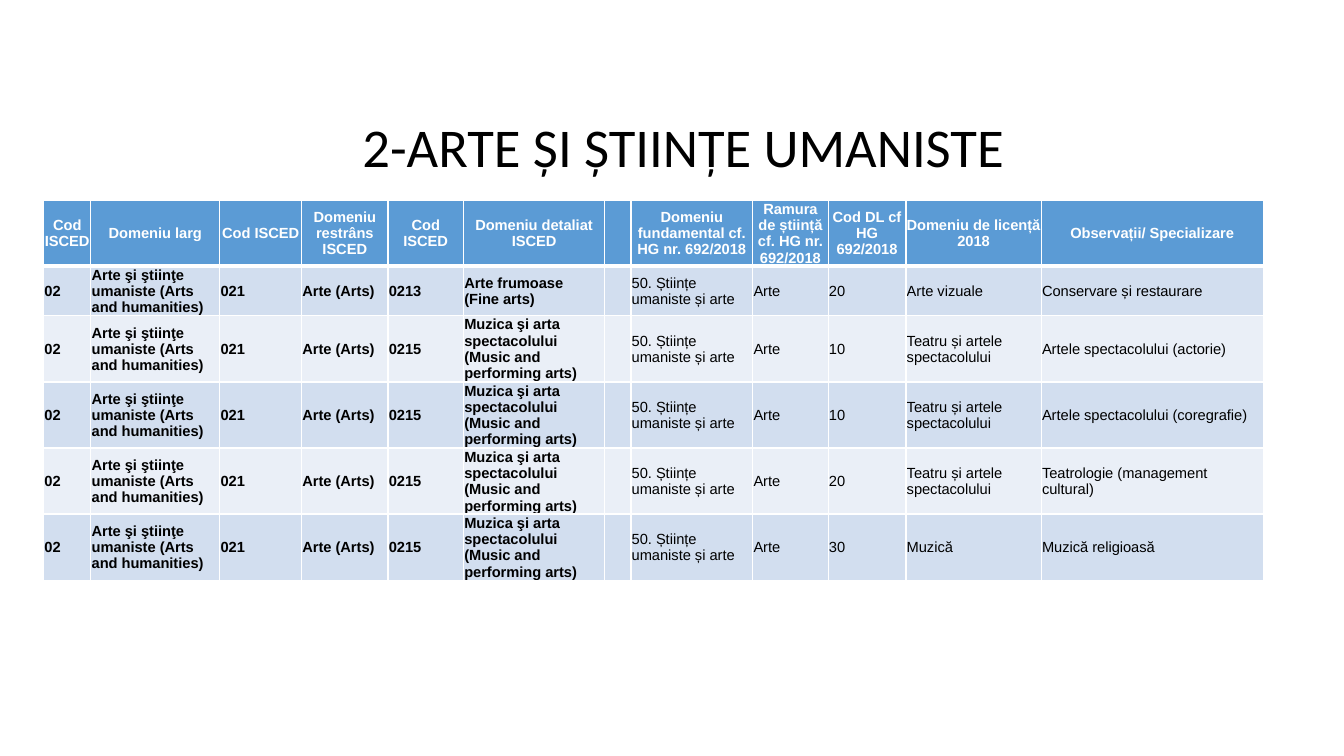
import pptx
import pptx.dml.color
import pptx.enum.text
import pptx.oxml
import pptx.oxml.ns
import pptx.util
from pptx.util import Cm

RGBColor = pptx.dml.color.RGBColor
PP_ALIGN = pptx.enum.text.PP_ALIGN
MIDDLE = pptx.enum.text.MSO_ANCHOR.MIDDLE

BLACK = RGBColor(0x00, 0x00, 0x00)
WHITE = RGBColor(0xFF, 0xFF, 0xFF)
HEADER_BLUE = RGBColor(0x5B, 0x9B, 0xD5)
BAND_BLUE = RGBColor(0xD2, 0xDE, 0xEF)
BAND_PALE = RGBColor(0xEA, 0xEF, 0xF7)

ROW_HEIGHT = 1.04
BOLD_COLUMNS = 6
COL_WIDTHS = [1.19, 3.25, 2.06, 2.18, 1.9, 3.56, 0.66, 3.07, 1.9, 1.96, 3.41, 5.6]
HEADERS = [
    "Cod ISCED", "Domeniu larg", "Cod ISCED", "Domeniu restrâns ISCED",
    "Cod ISCED", "Domeniu detaliat ISCED", "",
    "Domeniu fundamental cf. HG nr. 692/2018",
    "Ramura de știință cf. HG nr. 692/2018", "Cod DL cf HG 692/2018",
    "Domeniu de licență 2018", "Observații/ Specializare",
]
BROAD_FIELD = ["02", "Arte şi ştiinţe umaniste (Arts and humanities)", "021", "Arte (Arts)"]
FINE_ARTS = ["0213", "Arte frumoase\n(Fine arts)"]
PERFORMING_ARTS = ["0215", "Muzica şi arta spectacolului (Music and performing arts)"]
SCIENCE_BRANCH = ["", "50. Științe umaniste și arte", "Arte"]
THEATRE = "Teatru și artele spectacolului"
PROGRAMMES = [
    (FINE_ARTS, ["20", "Arte vizuale", "Conservare și restaurare"]),
    (PERFORMING_ARTS, ["10", THEATRE, "Artele spectacolului (actorie)"]),
    (PERFORMING_ARTS, ["10", THEATRE, "Artele spectacolului (coregrafie)"]),
    (PERFORMING_ARTS, ["20", THEATRE, "Teatrologie (management cultural)"]),
    (PERFORMING_ARTS, ["30", "Muzică", "Muzică religioasă"]),
]


def set_attrs(obj, values):
    """Set each named attribute on the object."""
    for name, value in values.items():
        setattr(obj, name, value)


def format_paragraph(p, size, font, color, bold, align):
    """Format a paragraph and its runs."""
    p.alignment = align
    for r in p.runs:
        set_attrs(r.font, {"size": pptx.util.Pt(size), "name": font, "bold": bold})
        r.font.color.rgb = color


def add_borders(cell, widths):
    """Draw white cell borders with the given widths in points."""
    tcPr = cell._tc.get_or_add_tcPr()
    for side, width in widths.items():
        tcPr.append(pptx.oxml.parse_xml(
            f'<a:ln{side} {pptx.oxml.ns.nsdecls("a")} w="{pptx.util.Pt(width)}">'
            f'<a:solidFill><a:srgbClr val="{WHITE}"/></a:solidFill></a:ln{side}>'))


def add_title(s, left, top, width, height):
    """Place and format the slide title in the given box."""
    sp = s.shapes.title
    set_attrs(sp, {"left": Cm(left), "top": Cm(top), "width": Cm(width), "height": Cm(height)})
    tf = sp.text_frame
    tf.text = "2-ARTE ȘI ȘTIINȚE UMANISTE"
    set_attrs(tf, {"word_wrap": True, "vertical_anchor": MIDDLE,
                   "auto_size": pptx.enum.text.MSO_AUTO_SIZE.NONE})
    p = tf.paragraphs[0]
    p.line_spacing = 0.8
    format_paragraph(p, 39, "Calibri", BLACK, False, PP_ALIGN.CENTER)


def fill_cell(cell, text, row, col):
    """Write and format one cell according to its row and column."""
    header = row == 0
    margin = Cm(0 if header else 0.02)
    set_attrs(cell, {"text": text, "vertical_anchor": MIDDLE, "margin_left": margin,
                     "margin_right": margin, "margin_top": margin, "margin_bottom": 0})
    add_borders(cell, {"L": 1, "R": 1, "T": 3 if row == 1 else 1, "B": 3 if header else 1})
    cell.fill.solid()
    cell.fill.fore_color.rgb = HEADER_BLUE if header else BAND_BLUE if row % 2 else BAND_PALE
    for p in cell.text_frame.paragraphs:
        format_paragraph(p, 10.5, "Arial", WHITE if header else BLACK,
                         header or col < BOLD_COLUMNS,
                         PP_ALIGN.CENTER if header else PP_ALIGN.LEFT)


def add_fields_table(s, left, top):
    """Add the table of study fields with its corner at the given point."""
    rows = [HEADERS] + [BROAD_FIELD + detailed + SCIENCE_BRANCH + licence
                        for detailed, licence in PROGRAMMES]
    table = s.shapes.add_table(len(rows), len(HEADERS), Cm(left), Cm(top),
                               Cm(sum(COL_WIDTHS)), Cm(ROW_HEIGHT * len(rows))).table
    for column, width in zip(table.columns, COL_WIDTHS):
        column.width = Cm(width)
    for i, texts in enumerate(rows):
        table.rows[i].height = Cm(ROW_HEIGHT)
        for j, text in enumerate(texts):
            fill_cell(table.cell(i, j), text, i, j)


def main():
    """Build the slide and save it."""
    prs = pptx.Presentation()
    set_attrs(prs, {"slide_width": Cm(33.87), "slide_height": Cm(19.05)})
    s = prs.slides.add_slide(prs.slide_layouts[5])
    add_title(s, 2.62, 2.95, 29.2, 1.73)
    add_fields_table(s, 1.1, 5.06)
    prs.save("out.pptx")


if __name__ == "__main__":
    main()
